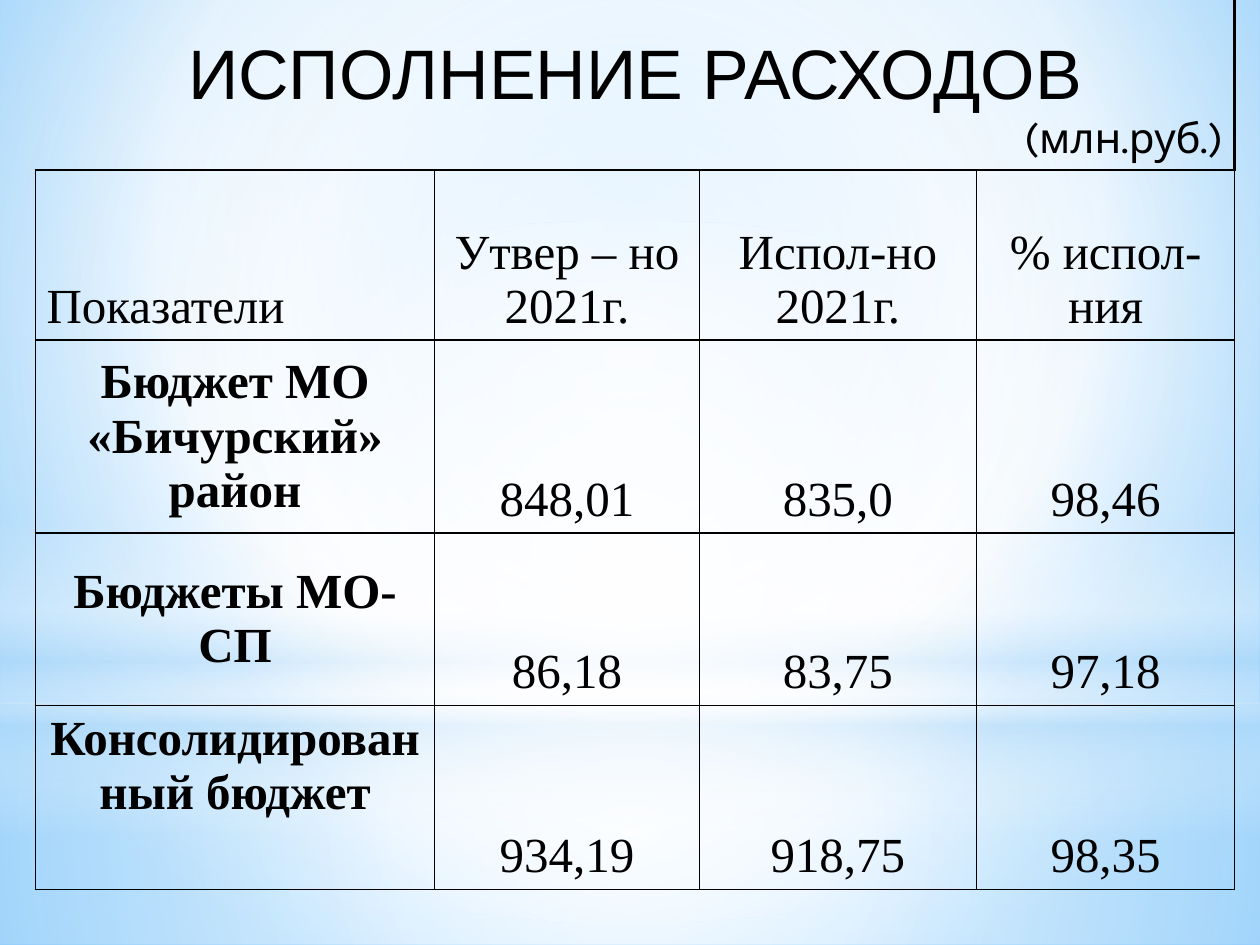
from pptx import Presentation
from pptx.dml.color import RGBColor
from pptx.enum.shapes import MSO_SHAPE
from pptx.enum.text import MSO_ANCHOR, PP_ALIGN
from pptx.oxml import parse_xml
from pptx.oxml.ns import nsdecls, qn
from pptx.util import Inches, Pt

BLACK = RGBColor(0x00, 0x00, 0x00)
WHITE = RGBColor(0xFF, 0xFF, 0xFF)
HAZE = RGBColor(0xB4, 0xDC, 0xFA)
SKY = RGBColor(0x9E, 0xD5, 0xFF)
DEEP_SKY = RGBColor(0x5B, 0xB9, 0xFF)

WIDTH, HEIGHT = Inches(10), Inches(7.5)
HORIZON = 0.744  # share of the height where sky meets water
CENTRE = (50, 50, 50, 50)

# Glow layers: shape, top and height as shares, focus (None = vertical), stops
GLOWS = [
    (MSO_SHAPE.RECTANGLE, HORIZON, 1 - HORIZON, CENTRE,
     [(0, WHITE, 91), (37, WHITE, 76), (100, HAZE, 79)]),
    (MSO_SHAPE.RECTANGLE, 0, HORIZON, CENTRE,
     [(0, WHITE, 89), (48, WHITE, 62), (100, HAZE, 79)]),
    (MSO_SHAPE.RECTANGLE, 0.55, 0.333, None,
     [(0, WHITE, 0), (29, WHITE, 30), (45, HAZE, 40),
      (55, WHITE, 26), (65, HAZE, 60), (100, WHITE, 0)]),
    (MSO_SHAPE.OVAL, 0.233, HORIZON, CENTRE,
     [(0, WHITE, 100), (56, WHITE, 0)]),
]

COLUMNS = [3.17, 2.1, 2.2, 2.05]
ROWS = [1.35, 1.35, 1.53, 1.37, 1.46]
HEADINGS = ["Показатели", "Утвер – но 2021г.", "Испол-но 2021г.", "% испол-ния"]
BUDGETS = [
    ["Бюджет МО «Бичурский» район", "848,01", "835,0", "98,46"],
    ["Бюджеты МО-СП", "86,18", "83,75", "97,18"],
    ["Консолидированный бюджет", "934,19", "918,75", "98,35"],
]
BUDGET_ANCHORS = [MSO_ANCHOR.MIDDLE, MSO_ANCHOR.MIDDLE, MSO_ANCHOR.TOP]

TITLE = {"name": "Arial", "size": Pt(40)}
UNIT = {"name": "Karla", "size": Pt(24)}
BODY = {"name": "Times New Roman", "size": Pt(28), "bold": False}
BUDGET_NAME = {**BODY, "bold": True}
MARGINS = {"margin_left": Inches(0.09), "margin_right": Inches(0.09),
           "margin_top": Inches(0.05), "margin_bottom": Inches(0.05)}
GRID_BORDERS = dict.fromkeys("LRTB", 1)
TITLE_BORDERS = {"L": 0, "R": 2.25, "T": 0, "B": 1}


def apply_format(target, values):
    for name, value in values.items():
        setattr(target, name, value)


def paint_gradient(fill, owner, stops, focus):
    """Fill with stops of (position, colour, opacity), round a focus or downwards."""
    fill.gradient()
    gradient = next(owner.iter(qn("a:gradFill")))
    for child in list(gradient):
        gradient.remove(child)
    marks = "".join(
        f'<a:gs pos="{position * 1000}"><a:srgbClr val="{colour}">'
        f'<a:alpha val="{opacity * 1000}"/></a:srgbClr></a:gs>'
        for position, colour, opacity in stops)
    gradient.append(parse_xml(f'<a:gsLst {nsdecls("a")}>{marks}</a:gsLst>'))
    if focus is None:
        direction = f'<a:lin {nsdecls("a")} ang="5400000" scaled="0"/>'
    else:
        sides = " ".join(f'{side}="{share * 1000}"' for side, share in zip("ltrb", focus))
        direction = (f'<a:path {nsdecls("a")} path="circle">'
                     f'<a:fillToRect {sides}/></a:path>')
    gradient.append(parse_xml(direction))


def add_glow(slide, kind, top, height, focus, stops):
    glow = slide.shapes.add_shape(kind, 0, int(HEIGHT * top), WIDTH, int(HEIGHT * height))
    glow.shadow.inherit = False
    glow.line.fill.background()
    paint_gradient(glow.fill, glow.element, stops, focus)


def set_borders(cell, widths):
    properties = cell._tc.get_or_add_tcPr()
    for side, width in widths.items():
        paint = (f'<a:solidFill><a:srgbClr val="{BLACK}"/></a:solidFill>'
                 if width else "<a:noFill/>")
        properties.append(parse_xml(
            f'<a:ln{side} {nsdecls("a")} w="{Pt(width)}">{paint}</a:ln{side}>'))


def style_cell(cell, borders, anchor=MSO_ANCHOR.BOTTOM):
    set_borders(cell, borders)
    cell.fill.background()
    apply_format(cell, {**MARGINS, "vertical_anchor": anchor})


def write(paragraph, text, font, alignment=PP_ALIGN.CENTER):
    paragraph.alignment = alignment
    run = paragraph.add_run()
    run.text = text
    apply_format(run.font, font)
    run.font.color.rgb = BLACK


def add_budget_table(slide):
    table = slide.shapes.add_table(
        len(ROWS), len(COLUMNS), Inches(0.28), 0,
        Inches(sum(COLUMNS)), Inches(sum(ROWS))).table
    apply_format(table, {"first_row": False, "horz_banding": False})
    for column, width in zip(table.columns, COLUMNS):
        column.width = Inches(width)
    for row, height in zip(table.rows, ROWS):
        row.height = Inches(height)

    # Title row across all columns
    for cell in table.rows[0].cells:
        style_cell(cell, TITLE_BORDERS)
    title = table.cell(0, 0)
    title.merge(table.cell(0, len(COLUMNS) - 1))
    write(title.text_frame.paragraphs[0], "ИСПОЛНЕНИЕ РАСХОДОВ", TITLE)
    write(title.text_frame.add_paragraph(), "(млн.руб.)", UNIT, PP_ALIGN.RIGHT)

    # Column headings
    for index, heading in enumerate(HEADINGS):
        cell = table.cell(1, index)
        style_cell(cell, GRID_BORDERS)
        write(cell.text_frame.paragraphs[0], heading, BODY,
              PP_ALIGN.CENTER if index else PP_ALIGN.LEFT)

    # Budgets: bold name, then figures
    for row, (budget, anchor) in enumerate(zip(BUDGETS, BUDGET_ANCHORS), start=2):
        for index, text in enumerate(budget):
            cell = table.cell(row, index)
            style_cell(cell, GRID_BORDERS, MSO_ANCHOR.BOTTOM if index else anchor)
            write(cell.text_frame.paragraphs[0], text, BODY if index else BUDGET_NAME)


def main():
    deck = Presentation()
    apply_format(deck, {"slide_width": WIDTH, "slide_height": HEIGHT})
    slide = deck.slides.add_slide(deck.slide_layouts[6])

    # Sky background and its glow
    paint_gradient(slide.background.fill, slide.element,
                   [(0, SKY, 100), (60, WHITE, 100), (100, DEEP_SKY, 100)],
                   (20, 10, 20, 60))
    for glow in GLOWS:
        add_glow(slide, *glow)

    add_budget_table(slide)
    deck.save("out.pptx")


if __name__ == "__main__":
    main()
